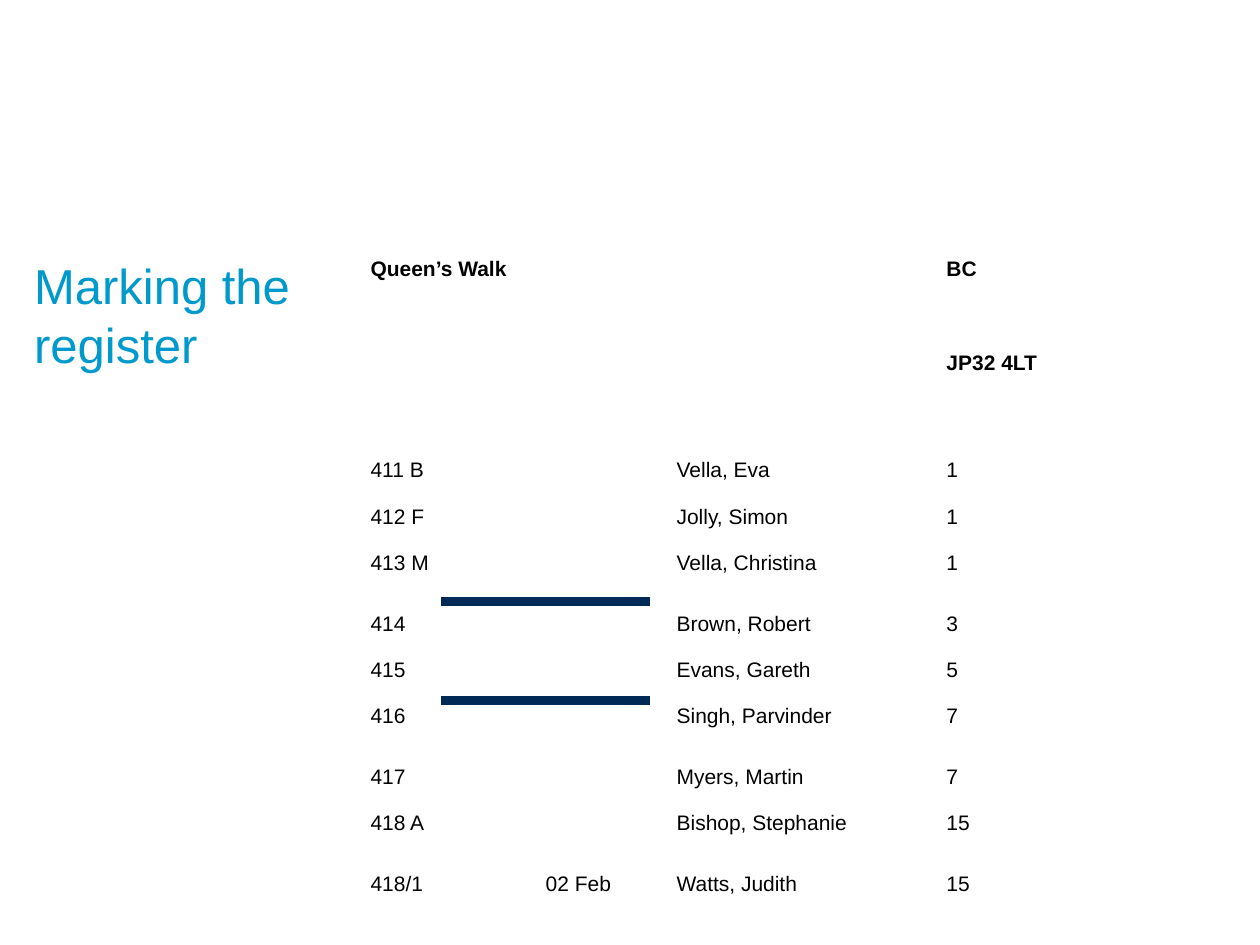
from collections import namedtuple
from dataclasses import dataclass

from lxml import etree
from pptx import Presentation
from pptx import util as u
from pptx.dml.color import RGBColor
from pptx.enum import shapes, text
from pptx.oxml import ns

Box = namedtuple("Box", "left top width height")


@dataclass(frozen=True)
class Theme:
    font: str = "Arial"
    title_color: str = "0099CC"
    text_color: str = "000000"
    paper: str = "FFFFFF"
    mark_color: str = "002A56"
    title_size: float = 28
    title_leading: float = 34
    table_size: float = 12
    table_leading: float = 12.8
    border_width: float = 0.38
    mark_width: float = 5


THEME = Theme()

TITLE_BOX = Box(u.Cm(0.69), u.Cm(5.13), u.Cm(6.98), u.Cm(11.86))
TABLE_BOX = Box(u.Cm(7.29), u.Cm(5.13), u.Cm(15.39), u.Cm(13.18))

COLUMN_WIDTHS = (3.53, 2.64, 5.44, 3.78)
TALL, GAP, PLAIN, BLANK = 1.9, 1.22, 0.89, 0.69
HEADING_ROWS = 2
# Each row: height in cm, then number, date, name, house
REGISTER = (
    (TALL, "Queen’s Walk", "", "", "BC"),
    (GAP, "", "", "", "JP32 4LT"),
    (BLANK, "", "", "", ""),
    (PLAIN, "411 B", "", "Vella, Eva", "1"),
    (PLAIN, "412 F", "", "Jolly, Simon", "1"),
    (GAP, "413 M", "", "Vella, Christina", "1"),
    (PLAIN, "414", "", "Brown, Robert", "3"),
    (PLAIN, "415", "", "Evans, Gareth", "5"),
    (GAP, "416", "", "Singh, Parvinder", "7"),
    (PLAIN, "417", "", "Myers, Martin", "7"),
    (GAP, "418 A", "", "Bishop, Stephanie", "15"),
    (GAP, "418/1", "02 Feb", "Watts, Judith", "15"),
)
# Marks, in cm from the corner of the table
MARK_LEFT, MARK_LENGTH = 1.6, 4.22
MARK_TOPS = (6.99, 8.99)


def set_values(target, values):
    for name, value in values.items():
        setattr(target, name, value)


def write(para, words, size, leading, color, bold=False):
    para.line_spacing = u.Pt(leading)
    span = para.add_run()
    span.text = words
    set_values(span.font, {"name": THEME.font, "size": u.Pt(size), "bold": bold})
    span.font.color.rgb = RGBColor.from_string(color)


def add_borders(cell):
    properties = cell._tc.get_or_add_tcPr()
    for position, side in enumerate(("lnL", "lnR", "lnT", "lnB")):
        line = etree.Element(ns.qn(f"a:{side}"), w=str(u.Pt(THEME.border_width)))
        fill = etree.SubElement(line, ns.qn("a:solidFill"))
        etree.SubElement(fill, ns.qn("a:srgbClr"), val=THEME.paper)
        properties.insert(position, line)


def fill_title(page, box):
    title = page.shapes.title
    set_values(title, box._asdict())
    frame = title.text_frame
    set_values(frame, {
        "margin_left": 0, "margin_top": 0, "margin_right": 0, "margin_bottom": 0,
        "word_wrap": True, "auto_size": text.MSO_AUTO_SIZE.NONE,
        "vertical_anchor": text.MSO_ANCHOR.TOP,
    })
    para = frame.paragraphs[0]
    para.alignment = text.PP_ALIGN.LEFT
    write(para, "Marking the register", THEME.title_size, THEME.title_leading,
          THEME.title_color)


def add_register(page, box):
    table = page.shapes.add_table(len(REGISTER), len(COLUMN_WIDTHS), *box).table
    set_values(table, {"first_row": False, "horz_banding": False})
    for column, width in zip(table.columns, COLUMN_WIDTHS):
        column.width = u.Cm(width)
    margins = {"margin_left": u.Cm(0.18), "margin_right": u.Cm(0.18),
               "margin_top": u.Cm(0.08), "margin_bottom": u.Cm(0.08)}
    for number, (height, *entries) in enumerate(REGISTER):
        table.rows[number].height = u.Cm(height)
        for cell, words in zip(table.rows[number].cells, entries):
            set_values(cell, margins)
            cell.fill.solid()
            cell.fill.fore_color.rgb = RGBColor.from_string(THEME.paper)
            add_borders(cell)
            if words:
                write(cell.text_frame.paragraphs[0], words, THEME.table_size,
                      THEME.table_leading, THEME.text_color,
                      bold=number < HEADING_ROWS)


def add_marks(page, box):
    left = box.left + u.Cm(MARK_LEFT)
    for offset in MARK_TOPS:
        top = box.top + u.Cm(offset)
        mark = page.shapes.add_connector(
            shapes.MSO_CONNECTOR.STRAIGHT, left, top, left + u.Cm(MARK_LENGTH), top)
        mark.line.width = u.Pt(THEME.mark_width)
        mark.line.color.rgb = RGBColor.from_string(THEME.mark_color)
        etree.SubElement(mark._element.spPr, ns.qn("a:effectLst"))


def main():
    deck = Presentation()
    set_values(deck, {"slide_width": u.Cm(25.4), "slide_height": u.Cm(19.05)})
    page = deck.slides.add_slide(deck.slide_layouts.get_by_name("Title Only"))
    # Heading on the left, register on the right, marks over its rows
    fill_title(page, TITLE_BOX)
    add_register(page, TABLE_BOX)
    add_marks(page, TABLE_BOX)
    deck.save("out.pptx")


if __name__ == "__main__":
    main()
